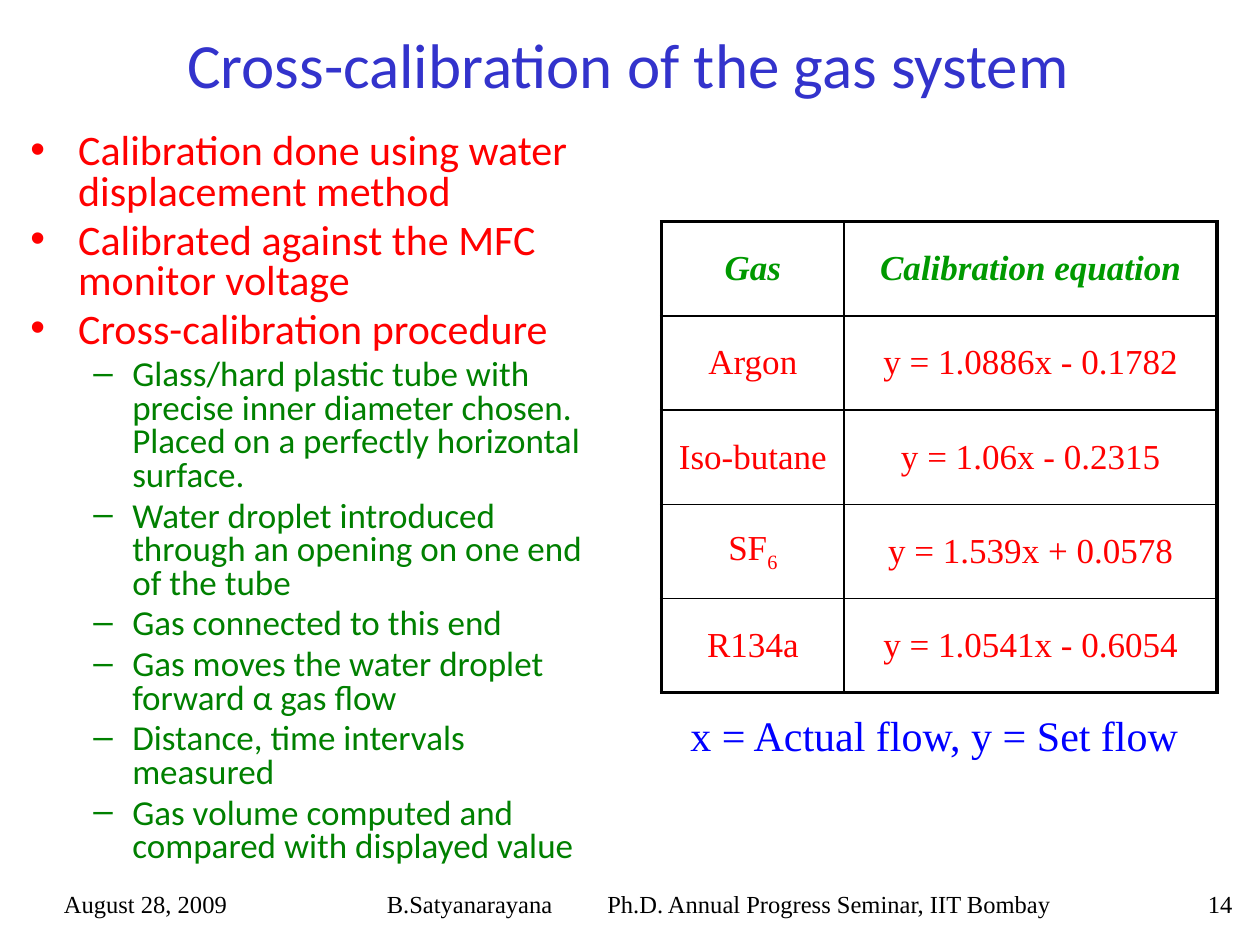
from dataclasses import dataclass

from lxml import etree
from pptx import Presentation, util as u
from pptx.dml.color import RGBColor
from pptx.enum import text as t
from pptx.oxml import ns

COLORS = {
    "title": "3333CC",
    "point": "FF0000",
    "detail": "008000",
    "header": "009900",
    "caption": "0000FF",
    "black": "000000",
}
SANS, SERIF = "Calibri", "Times New Roman"
CELL = u.Inches(0.1)  # the slide is a grid of 100 columns by 75 rows
CENTER, LEFT, RIGHT = t.PP_ALIGN.CENTER, t.PP_ALIGN.LEFT, t.PP_ALIGN.RIGHT


@dataclass(frozen=True)
class Area:
    left: float
    top: float
    width: float
    height: float

    def lengths(self) -> list:
        return [round(value * CELL) for value in (self.left, self.top, self.width, self.height)]


@dataclass(frozen=True)
class Style:
    font: str
    size: int
    color: str
    bold: bool = False
    italic: bool = False


@dataclass(frozen=True)
class Level:
    style: Style
    bullet: str
    margin: float
    hanging: float
    space_before: int


@dataclass(frozen=True)
class Label:
    text: str
    area: Area
    style: Style
    align: int = CENTER
    anchor: int = t.MSO_ANCHOR.MIDDLE
    inset: float = 1
    tab: float = 0


FOOTER = Style(SERIF, 14, "black")
HEADER = Style(SERIF, 20, "header", bold=True, italic=True)
VALUE = Style(SERIF, 20, "point")
POINT = Level(Style(SANS, 24, "point"), "•", 3.8, 3.8, 5)
DETAIL = Level(Style(SANS, 20, "detail"), "–", 8.1, 3.1, 4)

LABELS = [
    Label("August 28, 2009", Area(1.4, 69.2, 20.3, 5), FOOTER),
    Label("B.Satyanarayana\tPh.D. Annual Progress Seminar, IIT Bombay",
          Area(22.5, 69.2, 69.2, 5), FOOTER, LEFT, inset=8.2, tab=17.5),
    Label("14", Area(93, 69.2, 5.8, 5), FOOTER, RIGHT),
    Label("x = Actual flow, y = Set flow", Area(53.3, 55.8, 41.7, 5),
          Style(SERIF, 24, "caption"), anchor=t.MSO_ANCHOR.TOP),
]
PROCEDURE = [
    (POINT, "Calibration done using water displacement method"),
    (POINT, "Calibrated against the MFC monitor voltage"),
    (POINT, "Cross-calibration procedure"),
    (DETAIL, "Glass/hard plastic tube with precise inner diameter chosen. "
             "Placed on a perfectly horizontal surface."),
    (DETAIL, "Water droplet introduced through an opening on one end of the tube"),
    (DETAIL, "Gas connected to this end"),
    (DETAIL, "Gas moves the water droplet forward α gas flow"),
    (DETAIL, "Distance, time intervals measured"),
    (DETAIL, "Gas volume computed and compared with displayed value"),
]
# Gas, subscript of the gas, equation
CALIBRATIONS = [
    ("Gas", "", "Calibration equation"),
    ("Argon", "", "y = 1.0886x - 0.1782"),
    ("Iso-butane", "", "y = 1.06x - 0.2315"),
    ("SF", "6", "y = 1.539x + 0.0578"),
    ("R134a", "", "y = 1.0541x - 0.6054"),
]
TABLE_AREA = Area(52.5, 17.6, 44.1, 37.4)
COLUMN_WIDTHS = (14.5, 29.6)


def format_runs(paragraph, style: Style) -> None:
    for run in paragraph.runs:
        font = run.font
        font.name, font.size = style.font, u.Pt(style.size)
        font.bold, font.italic = style.bold, style.italic
        font.color.rgb = RGBColor.from_string(COLORS[style.color])


def place(shape, area: Area) -> None:
    shape.left, shape.top, shape.width, shape.height = area.lengths()


def add_label(slide, label: Label) -> None:
    frame = slide.shapes.add_textbox(*label.area.lengths()).text_frame
    frame.word_wrap = True
    frame.vertical_anchor = label.anchor
    frame.margin_left = round(label.inset * CELL)
    frame.text = label.text
    paragraph = frame.paragraphs[0]
    paragraph.alignment = label.align
    format_runs(paragraph, label.style)
    if label.tab:
        tabs = etree.SubElement(paragraph._p.get_or_add_pPr(), ns.qn("a:tabLst"))
        etree.SubElement(tabs, ns.qn("a:tab"), pos=str(round(label.tab * CELL)), algn="l")


def fill_title(title) -> None:
    place(title, Area(1.1, 1.7, 97.5, 6.7))
    frame = title.text_frame
    frame.text = "Cross-calibration of the gas system"
    frame.auto_size = t.MSO_AUTO_SIZE.NONE
    frame.vertical_anchor = t.MSO_ANCHOR.MIDDLE
    frame.paragraphs[0].alignment = CENTER
    format_runs(frame.paragraphs[0], Style(SANS, 36, "title"))


def fill_body(body) -> None:
    place(body, Area(1.4, 10.1, 47.9, 58.2))
    frame = body.text_frame
    frame.text = "\n".join(text for _, text in PROCEDURE)
    frame.auto_size = t.MSO_AUTO_SIZE.NONE
    for paragraph, (level, _) in zip(frame.paragraphs, PROCEDURE):
        paragraph.level = 1 if level is DETAIL else 0
        paragraph.line_spacing = 0.8
        paragraph.space_before = u.Pt(level.space_before)
        format_runs(paragraph, level.style)
        properties = paragraph._p.get_or_add_pPr()
        properties.set("marL", str(round(level.margin * CELL)))
        properties.set("indent", str(round(-level.hanging * CELL)))
        etree.SubElement(properties, ns.qn("a:buChar"), char=level.bullet)


def set_borders(cell, widths: dict) -> None:
    properties = cell._tc.get_or_add_tcPr()
    for side, width in widths.items():
        line = etree.SubElement(properties, ns.qn(f"a:ln{side}"), w=str(u.Pt(width)))
        fill = etree.SubElement(line, ns.qn("a:solidFill"))
        etree.SubElement(fill, ns.qn("a:srgbClr"), val=COLORS["black"])


def fill_cell(cell, text: str, subscript: str, style: Style) -> None:
    cell.vertical_anchor = t.MSO_ANCHOR.MIDDLE
    cell.text_frame.text = text
    paragraph = cell.text_frame.paragraphs[0]
    paragraph.alignment = CENTER
    if subscript:
        run = paragraph.add_run()
        run.text = subscript
        run._r.get_or_add_rPr().set("baseline", "-25000")
    format_runs(paragraph, style)


def add_calibration_table(slide) -> None:
    """Draw the table with a thick outer frame and thin inner rules."""
    row_count, column_count = len(CALIBRATIONS), len(COLUMN_WIDTHS)
    table = slide.shapes.add_table(row_count, column_count, *TABLE_AREA.lengths()).table
    table.first_row = table.horz_banding = False
    for column, width in zip(table.columns, COLUMN_WIDTHS):
        column.width = round(width * CELL)
    for row, (gas, subscript, equation) in enumerate(CALIBRATIONS):
        style = VALUE if row else HEADER
        for column, content in enumerate([(gas, subscript), (equation, "")]):
            cell = table.cell(row, column)
            fill_cell(cell, *content, style)
            outer = {"L": column == 0, "R": column == column_count - 1,
                     "T": row == 0, "B": row == row_count - 1}
            set_borders(cell, {side: 2.25 if edge else 1 for side, edge in outer.items()})
            cell.fill.background()


def main() -> None:
    presentation = Presentation()
    presentation.slide_width, presentation.slide_height = 100 * CELL, 75 * CELL
    slide = presentation.slides.add_slide(presentation.slide_layouts[1])
    fill_title(slide.shapes.title)
    fill_body(slide.placeholders[1])
    add_calibration_table(slide)
    for label in LABELS:
        add_label(slide, label)
    presentation.save("out.pptx")


if __name__ == "__main__":
    main()
